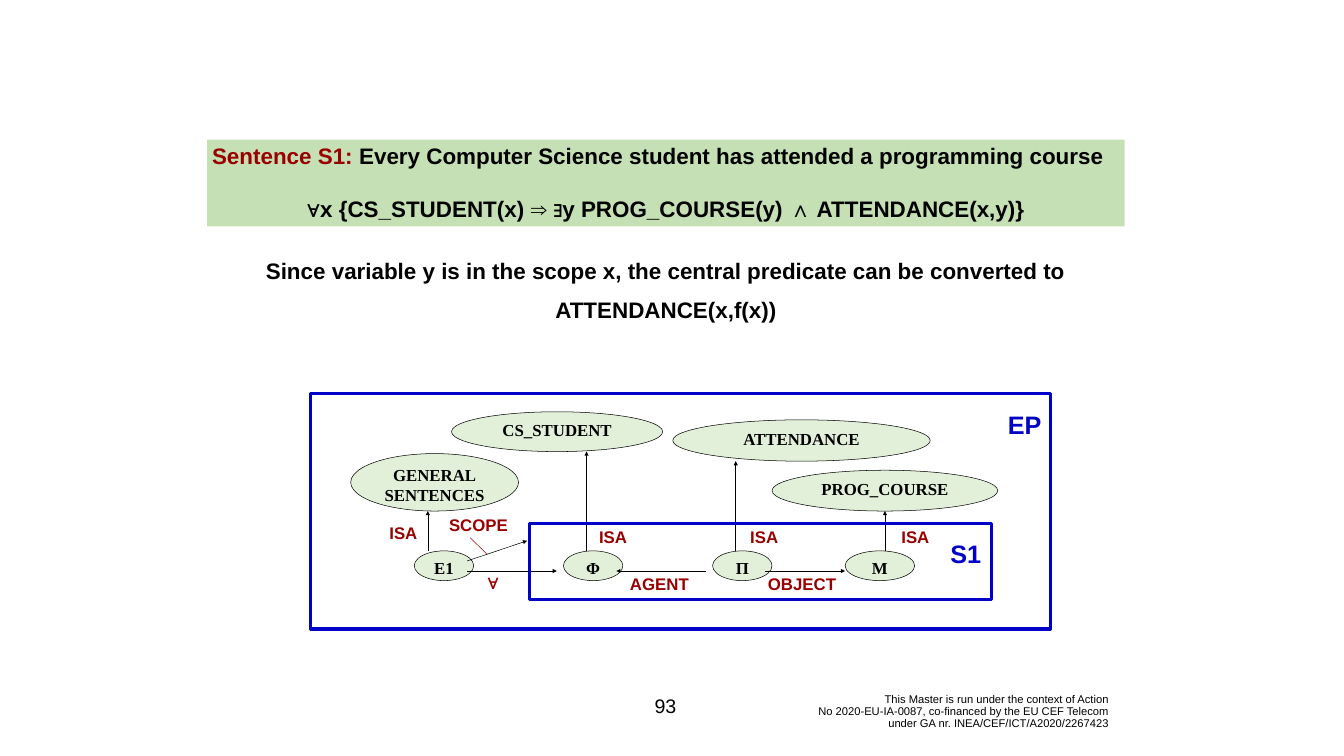
from lxml import etree
from pptx import Presentation
from pptx.dml.color import RGBColor
from pptx.enum.shapes import MSO_CONNECTOR, MSO_SHAPE
from pptx.enum.text import MSO_ANCHOR, PP_ALIGN
from pptx.oxml.ns import qn
from pptx.util import Inches, Pt

RECTANGLE, ELLIPSE = MSO_SHAPE.RECTANGLE, MSO_SHAPE.OVAL
STRAIGHT = MSO_CONNECTOR.STRAIGHT
TOP, MIDDLE = MSO_ANCHOR.TOP, MSO_ANCHOR.MIDDLE
LEFT, CENTER, RIGHT = PP_ALIGN.LEFT, PP_ALIGN.CENTER, PP_ALIGN.RIGHT

COLORS = {
    "black": "000000",
    "white": "FFFFFF",
    "red": "990000",
    "blue": "0100C8",
    "banner": "C5E0B4",
    "node": "E2F0D9",
}

BODY = {"name": "Arial", "size": Pt(32), "bold": True}
NODE = {"name": "Times New Roman", "size": Pt(24), "bold": True}
RELATION = {"name": "Arial", "size": Pt(24), "bold": True}
QUANTIFIER = {"name": "Arial", "size": Pt(28), "bold": True}
SPACE_NAME = {"name": "Arial", "size": Pt(36), "bold": True}
PAGE_NUMBER = {"name": "Arial", "size": Pt(28), "bold": False}
FOOTER = {"name": "Arial", "size": Pt(16), "bold": False}

SMALL_TOP, SMALL_HEIGHT = 10.93, 0.59
NODES = [
    ("CS_STUDENT", 8.96, 8.17, 4.19, 0.79),
    ("ATTENDANCE", 13.35, 8.33, 5.11, 0.82),
    ("PROG_COURSE", 15.32, 9.33, 4.48, 0.81),
    ("GENERAL\nSENTENCES", 6.96, 9, 3.33, 1.14),
    ("Φ", 11.18, SMALL_TOP, 1.18, SMALL_HEIGHT),
    ("Π", 14.14, SMALL_TOP, 1.18, SMALL_HEIGHT),
    ("Μ", 16.77, SMALL_TOP, 1.38, SMALL_HEIGHT),
    ("Ε1", 8.22, SMALL_TOP, 1.18, SMALL_HEIGHT),
]

ROLE_Y = 11.33
ROLE_ARROWS = [(9.27, 11.05), (14.01, 12.23), (15.19, 16.77)]
ISA_ARROWS = [(8.49, 10.14), (11.64, 8.96), (14.6, 9.15), (17.56, 10.14)]

LABELS = [
    ("OBJECT", 13.83, ROLE_Y, 4.17, 0.5, RELATION, "red"),
    ("AGENT", 11, ROLE_Y, 4.17, 0.5, RELATION, "red"),
    *[("ISA", left, 10.4, 1.67, 0.5, RELATION, "red") for left in (11.33, 14.33, 17.33)],
    ("ISA", 7.17, 10.33, 1.67, 0.5, RELATION, "red"),
    ("SCOPE", 8.33, 10.17, 2.33, 0.5, RELATION, "red"),
    ("∀", 8.95, 11.25, 1.67, 0.57, QUANTIFIER, "red"),
    ("ΕP", 19.5, 8.07, 1.67, 0.71, SPACE_NAME, "blue"),
    ("S1", 18.33, 10.64, 1.67, 0.71, SPACE_NAME, "blue"),
]


def rgb(color):
    return RGBColor.from_string(COLORS[color])


def add_span(para, text, font, color):
    span = para.add_run()
    span.text = text
    for name, value in font.items():
        setattr(span.font, name, value)
    span.font.color.rgb = rgb(color)


def fill_text(shape, paragraphs, font, align=CENTER, anchor=TOP, **spacing):
    """Write paragraphs, each a list of (text, color) spans; spacing applies after the first."""
    frame = shape.text_frame
    frame.word_wrap = True
    frame.vertical_anchor = anchor
    for index, spans in enumerate(paragraphs):
        para = frame.paragraphs[0] if index == 0 else frame.add_paragraph()
        para.alignment = align
        if index:
            for name, value in spacing.items():
                setattr(para, name, value)
        for text, color in spans:
            add_span(para, text, font, color)


def add_shape(page, kind, left, top, width, height, fill=None, line=None, weight=0.75):
    shape = page.shapes.add_shape(kind, Inches(left), Inches(top), Inches(width), Inches(height))
    shape.shadow.inherit = False
    if fill:
        shape.fill.solid()
        shape.fill.fore_color.rgb = rgb(fill)
    else:
        shape.fill.background()
    if line:
        shape.line.color.rgb = rgb(line)
        shape.line.width = Pt(weight)
    else:
        shape.line.fill.background()
    return shape


def add_node(page, text, left, top, width, height):
    node = add_shape(page, ELLIPSE, left, top, width, height, "node", "black")
    fill_text(node, [[(line, "black")] for line in text.split("\n")], NODE)


def add_label(page, text, left, top, width, height, font, color, **layout):
    box = page.shapes.add_textbox(Inches(left), Inches(top), Inches(width), Inches(height))
    fill_text(box, [[(text, color)]], font, **layout)
    return box


def add_line(page, start, end, color="black", arrow=True):
    line = page.shapes.add_connector(STRAIGHT, *map(Inches, (*start, *end)))
    line.line.color.rgb = rgb(color)
    line.line.width = Pt(0.75)
    if arrow:
        etree.SubElement(line.line._get_or_add_ln(), qn("a:tailEnd"), type="triangle")
    etree.SubElement(line._element.spPr, qn("a:effectLst"))


def add_footer(page):
    lines = [
        "This Master is run under the context of Action",
        "No 2020-EU-IA-0087, co-financed by the EU CEF Telecom",
        "under GA nr. INEA/CEF/ICT/A2020/2267423",
    ]
    box = add_label(page, lines[0], 15.02, 13.74, 7.08, 0.76, FOOTER, "black",
                    align=RIGHT, anchor=MIDDLE)
    para = box.text_frame.paragraphs[0]
    para.line_spacing = 0.9
    for line in lines[1:]:
        para.add_line_break()
        add_span(para, line, FOOTER, "black")
    for line_break in para._p.findall(qn("a:br")):
        etree.SubElement(line_break, qn("a:rPr"), sz="1600")


def add_sentence(page):
    banner = add_shape(page, RECTANGLE, 4.11, 2.77, 18.21, 1.72, "banner")
    fill_text(banner, [
        [("Sentence S1: ", "red"),
         ("Every Computer Science student has attended a programming course", "black")],
        [("∀x {CS_STUDENT(x) ⇒ ∃y PROG_COURSE(y) ∧ ATTENDANCE(x,y)}", "black")],
    ], BODY, LEFT, space_before=Pt(37))
    banner.text_frame.paragraphs[1].alignment = CENTER

    remark = add_shape(page, RECTANGLE, 4.11, 5.05, 18.21, 1.45, "white")
    fill_text(remark, [
        [("Since variable y is in the scope x, the central predicate can be converted to", "black")],
        [("ATTENDANCE(x,f(x))", "black")],
    ], BODY, space_before=Pt(18))


def add_network(page):
    for node in NODES:
        add_node(page, *node)
    for start, end in ROLE_ARROWS:
        add_line(page, (start, ROLE_Y), (end, ROLE_Y))
    add_line(page, (9.27, 11.13), (10.46, 10.73))
    for x, end in ISA_ARROWS:
        add_line(page, (x, SMALL_TOP), (x, end))
    for frame in [(10.5, 10.39, 9.17, 1.5), (6.17, 7.81, 14.67, 4.67)]:
        add_shape(page, RECTANGLE, *frame, line="blue", weight=4.5)
    add_line(page, (9.33, 10.67), (9.67, 11), "red", arrow=False)
    for label in LABELS:
        add_label(page, *label)


def main():
    deck = Presentation()
    deck.slide_width, deck.slide_height = Inches(26.67), Inches(15)
    page = deck.slides.add_slide(deck.slide_layouts[6])
    add_footer(page)
    add_label(page, "93", 12.65, 13.61, 1.11, 0.8, PAGE_NUMBER, "black", anchor=MIDDLE)
    add_sentence(page)
    add_network(page)
    deck.save("out.pptx")


if __name__ == "__main__":
    main()
